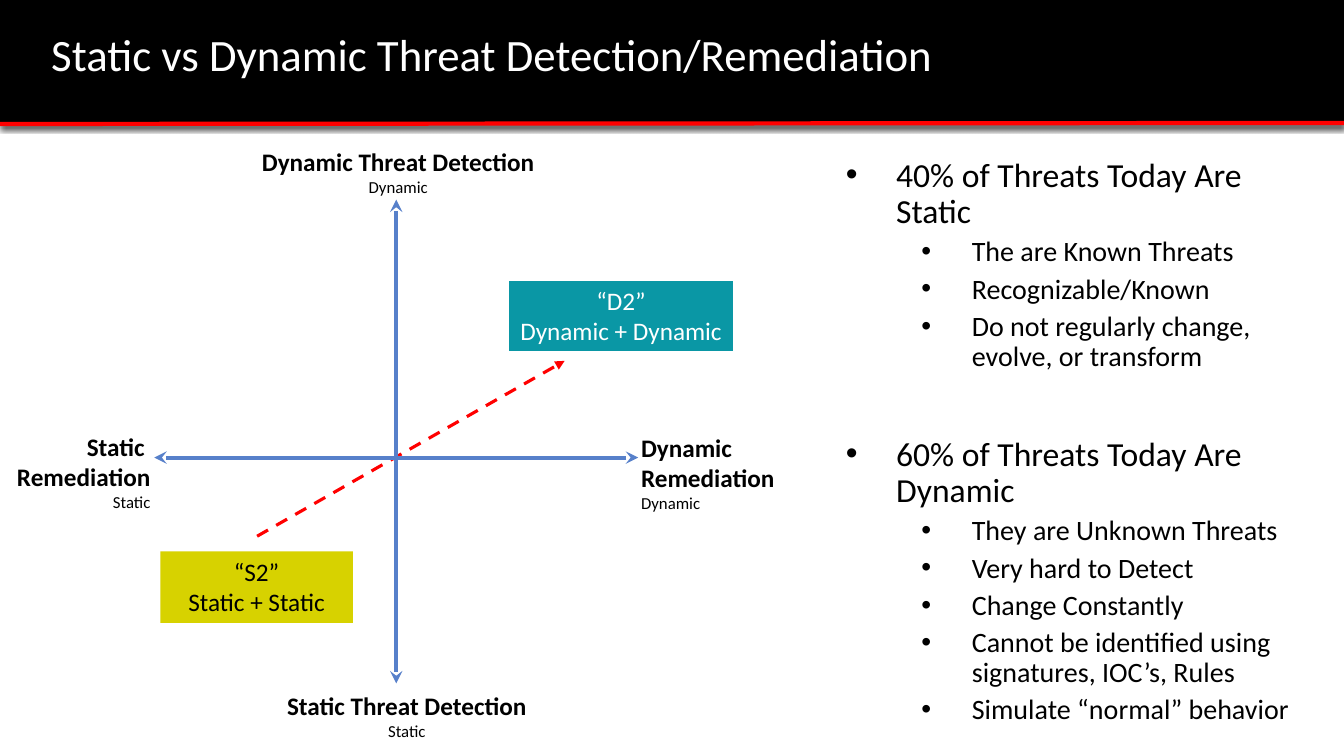
from lxml.etree import SubElement as Sub
from pptx import Presentation
from pptx.dml.color import RGBColor as Rgb
from pptx.enum.dml import MSO_LINE as Dash
from pptx.enum.shapes import MSO_CONNECTOR as Conn, MSO_SHAPE as Kind
from pptx.enum.text import MSO_ANCHOR as Anchor, PP_ALIGN as Align
from pptx.oxml.ns import qn
from pptx.util import Pt

PX = 9144
FONT = "Calibri"
HUES = {"black": "000000", "white": "FFFFFF", "red": "FF0000",
        "blue": "5780CA", "gold": "D7D200", "teal": "0A97A5"}
POINTS = [
    ("40% of Threats Today Are Static", [
        "The are Known Threats",
        "Recognizable/Known",
        "Do not regularly change, evolve, or transform"]),
    ("60% of Threats Today Are Dynamic", [
        "They are Unknown Threats",
        "Very hard to Detect",
        "Change Constantly",
        "Cannot be identified using signatures, IOC’s, Rules",
        "Simulate “normal” behavior"]),
]


def hue(name):
    """Give the colour with this name."""
    return Rgb.from_string(HUES[name])


def emu(*sizes):
    """Turn px into EMU."""
    return [size * PX for size in sizes]


def style(para, size, color="black", bold=False, align=Align.LEFT):
    """Set the font and alignment of a paragraph."""
    para.alignment = align
    font = para.font
    font.name, font.size, font.bold = FONT, Pt(size), bold
    font.color.rgb = hue(color)


def text(slide, *box):
    """Add an empty wrapping text box and return its frame."""
    frame = slide.shapes.add_textbox(*emu(*box)).text_frame
    frame.word_wrap = True
    return frame


def fill(frame, lines):
    """Write one paragraph per line and yield each."""
    for n, line in enumerate(lines):
        para = frame.add_paragraph() if n else frame.paragraphs[0]
        para.text = line
        yield para


def block(slide, box, color):
    """Add a plain rectangle."""
    shape = slide.shapes.add_shape(Kind.RECTANGLE, *emu(*box))
    shape.shadow.inherit = False
    shape.fill.solid()
    shape.fill.fore_color.rgb = hue(color)
    shape.line.fill.background()
    return shape


def stroke(slide, ends, color, width, head=None, tail=None):
    """Add a straight line and return it with its effect list."""
    line = slide.shapes.add_connector(Conn.STRAIGHT, *emu(*ends))
    line.line.color.rgb = hue(color)
    line.line.width = Pt(width)
    pen = line.line._get_or_add_ln()
    for tag, kind in (("a:headEnd", head), ("a:tailEnd", tail)):
        if kind:
            Sub(pen, qn(tag), type=kind)
    return line, Sub(line._element.spPr, qn("a:effectLst"))


def banner(slide, x, y, w, h):
    """Draw the title band with its red rule."""
    block(slide, (x, y, w, h), "black")
    rule, glow = stroke(slide, (x, y + h + 1, x + w, y + h), "red", 3)
    shade = Sub(glow, qn("a:outerShdw"), blurRad=str(Pt(4)),
                dist=str(Pt(1)), dir="5400000", rotWithShape="0")
    Sub(shade, qn("a:srgbClr"), val=HUES["black"])
    frame = text(slide, x + 41, y + 26, 1100, 62)
    frame.vertical_anchor = Anchor.MIDDLE
    for para in fill(frame, ["Static vs Dynamic Threat Detection/Remediation"]):
        style(para, 32, "white")
        para.line_spacing = 0.9


def label(slide, box, lines, align):
    """Name one end of an axis, with a small last line."""
    for n, para in enumerate(fill(text(slide, *box), lines), 1):
        last = n == len(lines)
        style(para, 12 if last else 18, bold=not last, align=align)


def card(slide, box, lines, back, color):
    """Draw one filled box of the map."""
    shape = block(slide, box, back)
    frame = shape.text_frame
    frame.word_wrap = True
    frame.vertical_anchor = Anchor.TOP
    for para in fill(frame, lines):
        style(para, 18, color, align=Align.CENTER)
    return shape


def plane(slide, x, y, w, h):
    """Draw the two axes, their labels, the cards and the trend arrow."""
    mid, row, half = x + w // 2, y + 314, 240
    top = y + 58
    trend, _ = stroke(slide, (x + 255, y + 392, x + 560, y + 218),
                      "red", 2.25, tail="triangle")
    trend.line.dash_style = Dash.DASH
    for ends in ((mid, top, mid, top + 2 * half),
                 (mid + half, row, mid - half, row)):
        stroke(slide, ends, "blue", 3, "stealth", "stealth")
    label(slide, (x + 136, y, 518, 61),
          ["Dynamic Threat Detection", "Dynamic"], Align.CENTER)
    label(slide, (x + 626, y + 284, 160, 91),
          ["Dynamic", "Remediation", "Dynamic"], Align.LEFT)
    label(slide, (x, y + 283, 159, 91),
          ["Static ", "Remediation", "Static"], Align.RIGHT)
    label(slide, (x + 181, y + h - 61, 445, 61),
          ["Static Threat Detection", "Static"], Align.CENTER)
    card(slide, (x + 159, y + 407, 191, 71),
         ["“S2”", "Static + Static"], "gold", "black")
    goal = card(slide, (x + 504, y + 138, 224, 71),
                ["“D2”", "Dynamic + Dynamic"], "teal", "white")
    goal.line.color.rgb = hue("white")
    goal.line.width = Pt(1.5)


def notes(slide, x, y, w, h):
    """List the points in two levels of bullets."""
    rows = []
    for n, (head, subs) in enumerate(POINTS):
        rows.append((head, 0, 24, 46 if n else 0))
        rows += [(sub, 1, 20, 5) for sub in subs]
    paras = fill(text(slide, x, y, w, h), [row[0] for row in rows])
    for para, (_, level, size, gap) in zip(paras, rows):
        para.level = level
        para.line_spacing = 0.9
        para.space_before = Pt(gap)
        props = para._p.get_or_add_pPr()
        left, hang = emu(125 if level else 50, -50)
        props.set("marL", str(left))
        props.set("indent", str(hang))
        Sub(props, qn("a:buFont"), typeface="Arial")
        Sub(props, qn("a:buChar"), char="•")
        style(para, size)


def main():
    """Build the slide and save it."""
    deck = Presentation()
    deck.slide_width, deck.slide_height = emu(1333, 750)
    slide = deck.slides.add_slide(deck.slide_layouts[6])
    banner(slide, 0, 0, 1333, 122)
    plane(slide, 0, 140, 786, 601)
    notes(slide, 829, 152, 478, 575)
    deck.save("out.pptx")


if __name__ == "__main__":
    main()
